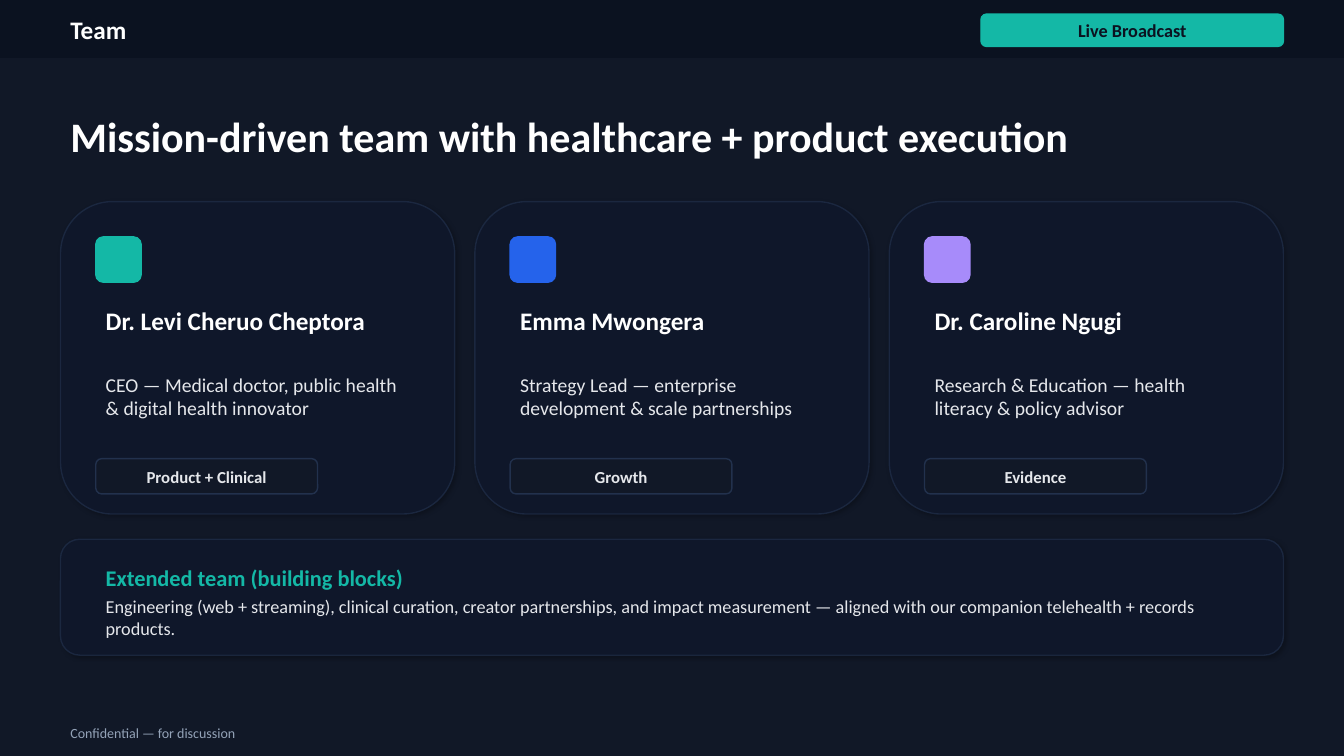
from lxml.etree import SubElement as Sub
from pptx import Presentation
from pptx.dml.color import RGBColor
from pptx.enum.shapes import MSO_SHAPE as Geo
from pptx.enum.text import MSO_ANCHOR as Anchor, PP_ALIGN as Align
from pptx.oxml.ns import qn
from pptx.util import Inches, Pt

WHITE = RGBColor(0xFF, 0xFF, 0xFF)
PALE = RGBColor(0xE5, 0xE7, 0xEB)
GRAY = RGBColor(0x94, 0xA3, 0xB8)
INK = RGBColor(0x0B, 0x12, 0x20)
NIGHT = RGBColor(0x11, 0x18, 0x27)
NAVY = RGBColor(0x0F, 0x17, 0x2A)
EDGE = RGBColor(0x22, 0x31, 0x4D)
TEAL = RGBColor(0x14, 0xB8, 0xA6)
BLUE = RGBColor(0x25, 0x63, 0xEB)
VIOLET = RGBColor(0xA7, 0x8B, 0xFA)

deck = Presentation()
deck.slide_width, deck.slide_height = Inches(13.33), Inches(7.5)
slide = deck.slides.add_slide(deck.slide_layouts[6])


def add_box(x, y, w, h, fill, edge=None, geo=Geo.ROUNDED_RECTANGLE, card=False):
    box = slide.shapes.add_shape(geo, Inches(x), Inches(y), Inches(w), Inches(h))
    box.shadow.inherit = False
    box.fill.solid()
    box.fill.fore_color.rgb = fill
    box.line.color.rgb = edge or fill
    box.line.width = Pt(1)
    if card:
        # Translucent edge and soft shadow
        props = box._element.spPr
        color = props.find(qn("a:ln")).find(".//" + qn("a:srgbClr"))
        Sub(color, qn("a:alpha"), val="65000")
        shade = Sub(props.find(qn("a:effectLst")), qn("a:outerShdw"),
                    blurRad=str(Pt(3)), dist=str(Pt(1.5)), dir="2700000",
                    algn="bl", rotWithShape="0")
        color = Sub(shade, qn("a:srgbClr"), val="000000")
        Sub(color, qn("a:alpha"), val="25000")


def add_text(x, y, w, h, text, size, color, bold=False, align=Align.LEFT):
    frame = slide.shapes.add_textbox(Inches(x), Inches(y), Inches(w), Inches(h)).text_frame
    frame.word_wrap = True
    frame.vertical_anchor = Anchor.MIDDLE
    para = frame.paragraphs[0]
    para.alignment = align
    run = para.add_run()
    run.text = text
    run.font.name = "Calibri"
    run.font.size = Pt(size)
    run.font.bold = bold
    run.font.color.rgb = color


left, wide, pad = 0.6, 12.13, 0.35

# Top bar
add_box(0, 0, 13.33, 0.58, INK, geo=Geo.RECTANGLE)
add_text(left, 0.12, 8.93, 0.35, "Team", 18, WHITE, True)
add_box(9.73, 0.14, 3, 0.32, TEAL)
add_text(9.73, 0.16, 3, 0.28, "Live Broadcast", 13, INK, True, Align.CENTER)

# Body and title
add_box(0, 0.58, 13.33, 6.92, NIGHT, geo=Geo.RECTANGLE)
add_text(left, 1.05, wide, 0.6,
         "Mission-driven team with healthcare + product execution", 30, WHITE, True)

# Team cards
team = [
    (TEAL, "Dr. Levi Cheruo Cheptora",
     "CEO — Medical doctor, public health & digital health innovator", "Product + Clinical"),
    (BLUE, "Emma Mwongera",
     "Strategy Lead — enterprise development & scale partnerships", "Growth"),
    (VIOLET, "Dr. Caroline Ngugi",
     "Research & Education — health literacy & policy advisor", "Evidence"),
]
gap = 0.2
card = (wide - 2 * gap) / 3
for i, (hue, name, role, tag) in enumerate(team):
    x = left + i * (card + gap)
    add_box(x, 2, card, 3.1, NAVY, EDGE, card=True)
    x += pad
    add_box(x, 2.35, 0.45, 0.45, hue)
    add_text(x, 2.95, card - 2 * pad, 0.45, name, 18, WHITE, True)
    add_text(x, 3.48, card - 2 * pad, 0.9, role, 14, PALE)
    add_box(x, 4.55, 2.2, 0.35, NIGHT, EDGE)
    add_text(x, 4.58, 2.2, 0.3, tag, 12, PALE, True, Align.CENTER)

# Extended team
add_box(left, 5.35, wide, 1.15, NAVY, EDGE, card=True)
add_text(left + pad, 5.55, wide - 2 * pad, 0.35,
         "Extended team (building blocks)", 16, TEAL, True)
add_text(left + pad, 5.9, wide - 2 * pad, 0.45,
         "Engineering (web + streaming), clinical curation, creator partnerships, and impact "
         "measurement — aligned with our companion telehealth + records products.", 13, PALE)

# Footer
add_text(left, 7.15, wide, 0.25, "Confidential — for discussion", 10, GRAY)

deck.save("out.pptx")
